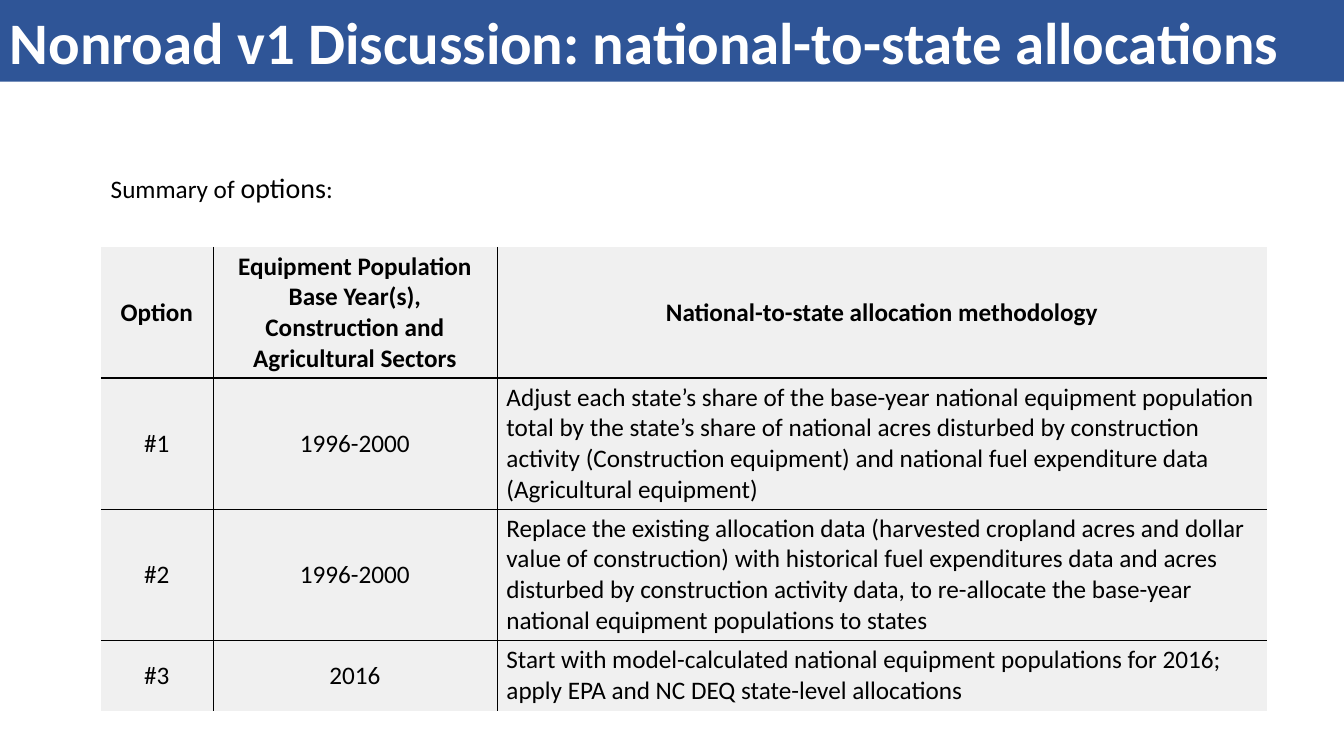
from lxml import etree
from pptx import Presentation
from pptx import util as u
from pptx.dml.color import RGBColor
from pptx.enum import shapes, text
from pptx.oxml.ns import qn

FONT = "Calibri"
BLACK, WHITE, BLUE, GREY = "000000", "FFFFFF", "2F5597", "F0F0F0"
THIN, HEADER_RULE = 0.25, 1.5

ROWS = [
    ("Option",
     "Equipment Population Base Year(s), Construction and Agricultural Sectors",
     "National-to-state allocation methodology"),
    ("#1", "1996-2000",
     "Adjust each state’s share of the base-year national equipment population "
     "total by the state’s share of national acres disturbed by construction "
     "activity (Construction equipment) and national fuel expenditure data "
     "(Agricultural equipment)"),
    ("#2", "1996-2000",
     "Replace the existing allocation data (harvested cropland acres and dollar "
     "value of construction) with historical fuel expenditures data and acres "
     "disturbed by construction activity data, to re-allocate the base-year "
     "national equipment populations to states"),
    ("#3", "2016",
     "Start with model-calculated national equipment populations for 2016; "
     "apply EPA and NC DEQ state-level allocations"),
]
COLUMN_WIDTHS = [80, 203, 550]
ROW_HEIGHTS = [93.6, 93.6, 93.6, 50.4]


def color(value):
    return RGBColor.from_string(value)


def add_border(cell, side, width):
    """Draw one side (L, R, T or B) of a cell; zero width means no line."""
    properties = cell._tc.get_or_add_tcPr()
    line = etree.SubElement(properties, qn(f"a:ln{side}"), w=str(u.Pt(width)))
    if width:
        fill = etree.SubElement(line, qn("a:solidFill"))
        etree.SubElement(fill, qn("a:srgbClr"), val=BLACK)
    else:
        etree.SubElement(line, qn("a:noFill"))


class SlideBuilder:
    def __init__(self, slide, font):
        self.slide = slide
        self.font = font

    def run(self, paragraph, words, size, ink=BLACK, bold=False):
        run = paragraph.add_run()
        run.text = words
        run.font.name = self.font
        run.font.size = u.Pt(size)
        run.font.bold = bold
        run.font.color.rgb = color(ink)

    def title_bar(self, words, width, height):
        shape = self.slide.shapes.add_shape(
            shapes.MSO_SHAPE.RECTANGLE, 0, 0, u.Pt(width), u.Pt(height))
        shape.shadow.inherit = False
        shape.fill.solid()
        shape.fill.fore_color.rgb = color(BLUE)
        shape.line.fill.background()
        frame = shape.text_frame
        frame.word_wrap = True
        frame.auto_size = text.MSO_AUTO_SIZE.SHAPE_TO_FIT_TEXT
        frame.vertical_anchor = text.MSO_ANCHOR.MIDDLE
        paragraph = frame.paragraphs[0]
        paragraph.alignment = text.PP_ALIGN.LEFT
        self.run(paragraph, words, 42, WHITE, True)

    def label(self, left, top, width, height, runs):
        box = self.slide.shapes.add_textbox(*map(u.Pt, (left, top, width, height)))
        frame = box.text_frame
        frame.word_wrap = False
        frame.auto_size = text.MSO_AUTO_SIZE.SHAPE_TO_FIT_TEXT
        for words, size in runs:
            self.run(frame.paragraphs[0], words, size)

    def table(self, left, top, rows, widths, heights):
        frame = self.slide.shapes.add_table(
            len(rows), len(widths), u.Pt(left), u.Pt(top),
            u.Pt(sum(widths)), u.Pt(sum(heights)))
        table = frame.table
        table.horz_banding = False
        for column, width in zip(table.columns, widths):
            column.width = u.Pt(width)
        for row, height in zip(table.rows, heights):
            row.height = u.Pt(height)
        # One rule per grid line, with none around the outside
        vertical = [0] + [THIN] * (len(widths) - 1) + [0]
        horizontal = [0, HEADER_RULE] + [THIN] * (len(rows) - 2) + [0]
        for i, row in enumerate(rows):
            for j, words in enumerate(row):
                cell = table.cell(i, j)
                for side, width in zip("LRTB", vertical[j:j + 2] + horizontal[i:i + 2]):
                    add_border(cell, side, width)
                self.fill_cell(cell, words, header=i == 0, centered=i == 0 or j < 2)

    def fill_cell(self, cell, words, header, centered):
        cell.fill.solid()
        cell.fill.fore_color.rgb = color(GREY)
        cell.vertical_anchor = text.MSO_ANCHOR.MIDDLE
        cell.margin_left = cell.margin_right = u.Pt(6.8)
        cell.margin_top = cell.margin_bottom = u.Pt(2.9)
        paragraph = cell.text_frame.paragraphs[0]
        align = text.PP_ALIGN
        paragraph.alignment = align.CENTER if centered else align.LEFT
        self.run(paragraph, words, 18, bold=header)


def main():
    presentation = Presentation()
    presentation.slide_width = u.Pt(960)
    presentation.slide_height = u.Pt(540)
    slide = presentation.slides.add_slide(presentation.slide_layouts[6])
    builder = SlideBuilder(slide, FONT)
    builder.title_bar("Nonroad v1 Discussion: national-to-state allocations", 960, 58.3)
    builder.table(72, 176.4, ROWS, COLUMN_WIDTHS, ROW_HEIGHTS)
    builder.label(72, 118, 178.6, 31.5, [("Summary of ", 18), ("options", 20), (":", 18)])
    presentation.save("out.pptx")


if __name__ == "__main__":
    main()
